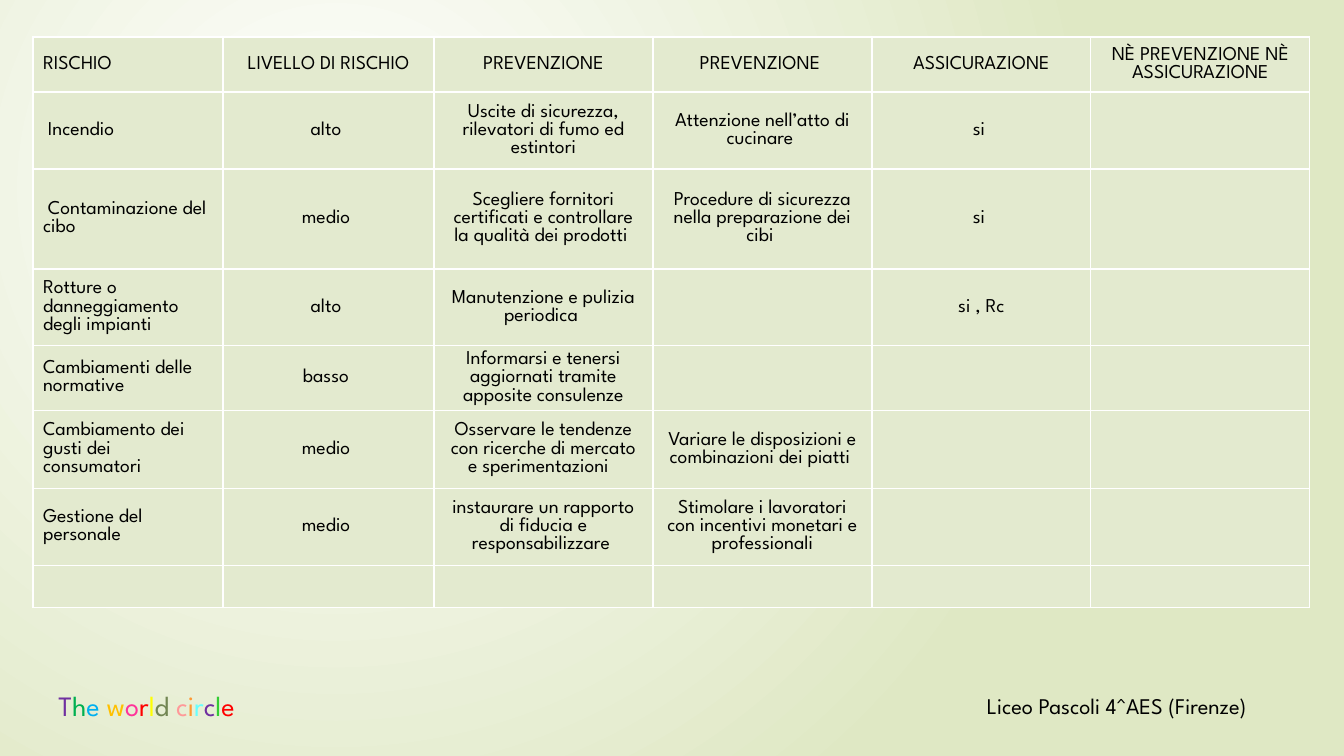
from lxml import etree
from pptx import Presentation
from pptx.dml.color import RGBColor
from pptx.enum.text import MSO_ANCHOR, PP_ALIGN
from pptx.oxml.ns import qn
from pptx.util import Emu, Pt

LEFT, CENTER = PP_ALIGN.LEFT, PP_ALIGN.CENTER
MIDDLE = MSO_ANCHOR.MIDDLE

FONT = "League Spartan"
BLACK, WHITE = "000000", "FFFFFF"
CELL_FILL, BACKGROUND_EDGE = "E3EACF", "DFE8C4"

RISKS = [
    ("RISCHIO", "LIVELLO DI RISCHIO", "PREVENZIONE", "PREVENZIONE ", "ASSICURAZIONE",
     "NÈ PREVENZIONE NÈ ASSICURAZIONE"),
    (" Incendio", "alto ", "Uscite di sicurezza, rilevatori di fumo ed estintori",
     "Attenzione nell’atto di cucinare ", "si ", ""),
    (" Contaminazione del cibo", "medio ",
     "Scegliere fornitori certificati e controllare la qualità dei prodotti ",
     "Procedure di sicurezza nella preparazione dei cibi ", "si ", ""),
    ("Rotture o danneggiamento degli impianti", "alto ",
     "Manutenzione e pulizia periodica ", "", "si , Rc", ""),
    ("Cambiamenti delle normative", "basso ",
     "Informarsi e tenersi aggiornati tramite apposite consulenze", "", "", ""),
    ("Cambiamento dei gusti dei consumatori", "medio ",
     "Osservare le tendenze con ricerche di mercato e sperimentazioni  ",
     "Variare le disposizioni e combinazioni dei piatti ", "", ""),
    ("Gestione del personale", "medio ",
     "instaurare un rapporto di fiducia e responsabilizzare ",
     "Stimolare i lavoratori con incentivi monetari e professionali", "", ""),
    ("", "", "", "", "", ""),
]
COLUMN_WIDTHS = [190, 211, 219, 219, 219, 219]
ROW_HEIGHTS = [55, 77, 100, 77, 64, 78, 77, 42]
TABLE_LEFT, TABLE_TOP = 33, 37

MOTTO = [
    ("T", "7030A0"), ("h", "00B050"), ("e ", "00B0F0"), ("w", "FFC000"), ("o", "FF3399"),
    ("r", "FF0000"), ("l", "FFFF00"), ("d ", "728653"), ("c", "FF9999"), ("i", "FF9933"),
    ("r", "66FFFF"), ("c", "7030A0"), ("l", "33CC33"), ("e ", "FF0000"),
]
SCHOOL = [("Liceo Pascoli 4^AES (Firenze)", BLACK)]
FOOTERS = [
    (MOTTO, (33, 684, 234, 44), 20, CENTER),
    (SCHOOL, (977, 687, 335, 37), 16, LEFT),
]


def px(length):
    return Emu(round(length * 914400 / 100.8))


def color(value):
    return RGBColor.from_string(value)


def write(paragraph, runs, size, alignment):
    paragraph.alignment = alignment
    for text, run_color in runs:
        run = paragraph.add_run()
        run.text = text
        run.font.name = FONT
        run.font.size = Pt(size)
        run.font.color.rgb = color(run_color)


def add_borders(cell):
    properties = cell._tc.get_or_add_tcPr()
    for side in ("a:lnL", "a:lnR", "a:lnT", "a:lnB"):
        line = etree.SubElement(properties, qn(side), w=str(Pt(1)))
        fill = etree.SubElement(line, qn("a:solidFill"))
        etree.SubElement(fill, qn("a:srgbClr"), val=WHITE)


def paint_background(slide):
    fill = slide.background.fill
    fill.gradient()
    for stop, value in zip(fill.gradient_stops, (WHITE, BACKGROUND_EDGE)):
        stop.color.rgb = color(value)
    gradient = next(slide.element.iter(qn("a:gradFill")))
    linear = gradient.find(qn("a:lin"))
    circle = etree.Element(qn("a:path"))
    circle.set("path", "circle")
    etree.SubElement(circle, qn("a:fillToRect"), l="50000", t="50000", r="100000", b="100000")
    gradient.replace(linear, circle)


def add_risk_table(slide):
    frame = slide.shapes.add_table(
        len(RISKS), len(COLUMN_WIDTHS), px(TABLE_LEFT), px(TABLE_TOP),
        px(sum(COLUMN_WIDTHS)), px(sum(ROW_HEIGHTS)))
    table = frame.table
    for column, width in zip(table.columns, COLUMN_WIDTHS):
        column.width = px(width)
    for row, height, texts in zip(table.rows, ROW_HEIGHTS, RISKS):
        row.height = px(height)
        for index, (cell, text) in enumerate(zip(row.cells, texts)):
            add_borders(cell)
            cell.fill.solid()
            cell.fill.fore_color.rgb = color(CELL_FILL)
            cell.vertical_anchor = MIDDLE
            if text:
                alignment = CENTER if index else LEFT
                write(cell.text_frame.paragraphs[0], [(text, BLACK)], 14, alignment)


def add_footer(slide, runs, box, size, alignment):
    shape = slide.shapes.add_textbox(*map(px, box))
    shape.text_frame.word_wrap = True
    write(shape.text_frame.paragraphs[0], runs, size, alignment)


def main():
    presentation = Presentation()
    presentation.slide_width = px(1344)
    presentation.slide_height = px(756)
    slide = presentation.slides.add_slide(presentation.slide_layouts[6])
    paint_background(slide)
    add_risk_table(slide)
    for footer in FOOTERS:
        add_footer(slide, *footer)
    presentation.save("out.pptx")


if __name__ == "__main__":
    main()
